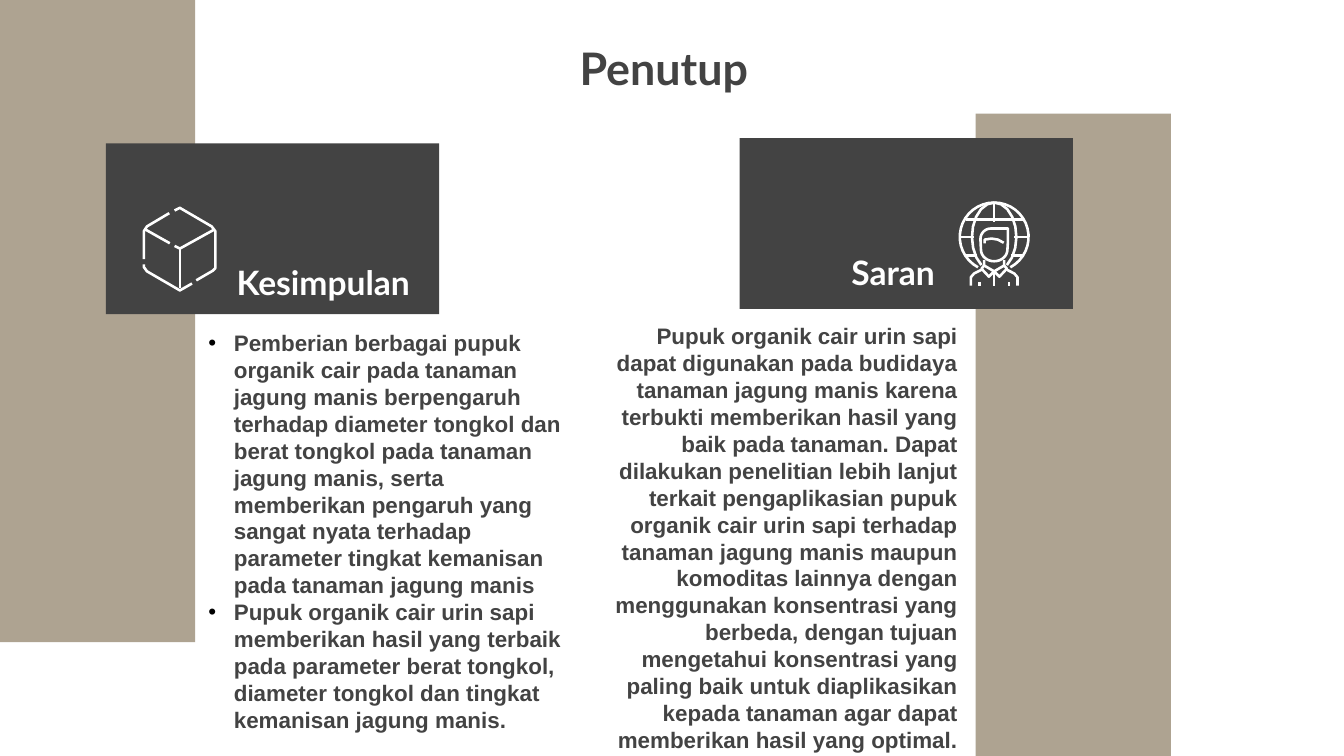
"""Build the closing slide with conclusions on the left and suggestions on the right."""
import math
import lxml.etree
import pptx
import pptx.dml.color
import pptx.enum.shapes
import pptx.enum.text
import pptx.oxml.ns
import pptx.util

Cm, Pt = pptx.util.Cm, pptx.util.Pt
ALIGN, ANCHOR = pptx.enum.text.PP_ALIGN, pptx.enum.text.MSO_ANCHOR
DARK, TAN, WHITE = "434343", "908269", "FFFFFF"
CENTER_X, CENTER_Y, RADIUS = 18.79, 4.48, 0.65

PANELS = [
    ((18.44, 2.15, 3.69, 12.14), TAN, 73),
    ((13.98, 2.61, 6.3, 3.23), DARK, 100),
    ((0, 0, 3.69, 12.14), TAN, 73),
    ((2, 2.71, 6.3, 3.23), DARK, 100),
]
CONCLUSIONS = [
    "Pemberian berbagai pupuk organik cair pada tanaman jagung manis berpengaruh terhadap "
    "diameter tongkol dan berat tongkol pada tanaman jagung manis, serta memberikan pengaruh "
    "yang sangat nyata terhadap parameter tingkat kemanisan pada tanaman jagung manis",
    "Pupuk organik cair urin sapi memberikan hasil yang terbaik pada parameter berat tongkol, "
    "diameter tongkol dan tingkat kemanisan jagung manis.",
]
SUGGESTIONS = [
    "Pupuk organik cair urin sapi dapat digunakan pada budidaya tanaman jagung manis karena "
    "terbukti memberikan hasil yang baik pada tanaman. Dapat dilakukan penelitian lebih lanjut "
    "terkait pengaplikasian pupuk organik cair urin sapi terhadap tanaman jagung manis maupun "
    "komoditas lainnya dengan menggunakan konsentrasi yang berbeda, dengan tujuan mengetahui "
    "konsentrasi yang paling baik untuk diaplikasikan kepada tanaman agar dapat memberikan "
    "hasil yang optimal.",
]
TITLE = {"name": "Lato", "size": Pt(24), "bold": True}
HEADING = {"name": "Lato", "size": Pt(18), "bold": True}
BODY = {"name": "Arial", "size": Pt(12), "bold": True}
TEXTS = [
    (0, (9.14, 0.6, 6.81, 1.35), ["Penutup"], TITLE, DARK, ALIGN.CENTER, ANCHOR.MIDDLE, False),
    (2, (3.69, 5.97, 7.47, 3.1), CONCLUSIONS, BODY, DARK, ALIGN.LEFT, ANCHOR.TOP, True),
    (4, (11.25, 5.84, 7.1, 7.92), SUGGESTIONS, BODY, DARK, ALIGN.RIGHT, ANCHOR.TOP, False),
    (3, (13.98, 4.71, 3.94, 1.07), ["Saran"], HEADING, WHITE, ALIGN.RIGHT, ANCHOR.BOTTOM, False),
    (1, (4.22, 4.9, 7.26, 1.07), ["Kesimpulan"], HEADING, WHITE, ALIGN.LEFT, ANCHOR.BOTTOM, False),
]


def arc(cx, cy, rx, ry, start, end, steps=16):
    angles = [math.radians(start + (end - start) * i / steps) for i in range(steps + 1)]
    return [(cx + rx * math.cos(a), cy + ry * math.sin(a)) for a in angles]


def both_sides(lines):
    return lines + [[(2 * CENTER_X - x, y) for x, y in line] for line in lines]


CUBE = [
    [
        [(3.3, 3.98), (3.4, 3.93), (4, 4.28), (4.07, 4.37), (4.07, 5.07), (4.02, 5.12), (3.71, 5.3)],
        [(3.63, 5.36), (3.4, 5.49), (2.78, 5.13), (2.72, 5.05), (2.72, 5)],
        [(3.3, 4.65), (3.4, 4.7), (4.05, 4.34)],
        [(3.4, 4.7), (3.4, 5.45)],
    ],
    [
        [(2.72, 4.9), (2.72, 4.37), (2.78, 4.28), (3.2, 4.03)],
        [(2.75, 4.34), (3.21, 4.6)],
    ],
]
GLOBE = both_sides([
    arc(CENTER_X, CENTER_Y, 0.42, RADIUS, 125, 270, 8),
    [(18.16, 4.48), (18.41, 4.48)],
    [(18.23, 4.83), (18.47, 4.83)],
]) + [
    arc(CENTER_X, CENTER_Y, RADIUS, RADIUS, 118, 422, 32),
    [(18.25, 4.15), (19.33, 4.15)],
    [(CENTER_X, 3.83), (CENTER_X, 4.2)],
]
PERSON = both_sides([
    [(18.6, 4.92), (18.6, 5.02), (18.55, 5.08), (18.69, 5.23), (CENTER_X, 5.13), (18.6, 5.02)],
    [(18.35, 5.4), (18.35, 5.24), (18.41, 5.17), (18.55, 5.1)],
    [(18.51, 5.33), (18.51, 5.4)],
]) + [
    [(CENTER_X, 5.13), (CENTER_X, 5.4)],
    [(19.05, 4.32)] + arc(18.73, 4.52, 0.2, 0.2, 270, 180, 6)
    + arc(CENTER_X, 4.72, 0.25, 0.22, 180, 0) + [(19.05, 4.56), (19.05, 4.32)],
]
FRINGE = [[(18.61, 4.6), (18.61, 4.53), (18.74, 4.51), (18.86, 4.53), (18.97, 4.59)]]


def rgb(value):
    return pptx.dml.color.RGBColor.from_string(value)


def add_xml(parent, tag, **attrs):
    return lxml.etree.SubElement(parent, pptx.oxml.ns.qn(tag), **attrs)


def add_panel(s, box, color, alpha):
    sp = s.shapes.add_shape(pptx.enum.shapes.MSO_SHAPE.RECTANGLE, *map(Cm, box))
    sp.shadow.inherit = False
    sp.fill.solid()
    sp.fill.fore_color.rgb = rgb(color)
    sp.line.fill.background()
    if alpha < 100:
        clr = sp.element.spPr.find(".//" + pptx.oxml.ns.qn("a:srgbClr"))
        add_xml(clr, "a:alpha", val=str(alpha * 1000))


def add_icon(s, parts):
    shapes = s.shapes.add_group_shape().shapes
    for lines in parts:
        contours = [[(Cm(x), Cm(y)) for x, y in line] for line in lines]
        builder = shapes.build_freeform(*contours[0][0])
        for i, pts in enumerate(contours):
            if i:
                builder.move_to(*pts[0])
            builder.add_line_segments(pts[1:], close=False)
        sp = builder.convert_to_shape()
        sp.shadow.inherit = False
        sp.fill.background()
        sp.line.color.rgb = rgb(WHITE)
        sp.line.width = Pt(1.4)


def fill_text(s, idx, box, paragraphs, font, color, align, anchor, bulleted):
    sp = s.placeholders[idx]
    s.shapes.element.append(sp.element)
    sp.left, sp.top, sp.width, sp.height = map(Cm, box)
    tf = sp.text_frame
    frame = {"word_wrap": True, "auto_size": pptx.enum.text.MSO_AUTO_SIZE.NONE,
             "vertical_anchor": anchor}
    frame.update({"margin_" + side: Cm(0.25) for side in ("left", "top", "right", "bottom")})
    for key, value in frame.items():
        setattr(tf, key, value)
    for i, text in enumerate(paragraphs):
        p = tf.add_paragraph() if i else tf.paragraphs[0]
        p.alignment, p.space_before = align, Pt(0)
        p.line_spacing = Pt(14.42) if font is BODY else 1.0
        r = p.add_run()
        r.text = text
        for key, value in font.items():
            setattr(r.font, key, value)
        r.font.color.rgb = rgb(color)
        pPr = p._p.get_or_add_pPr()
        indent = Cm(0.48) if bulleted else 0
        pPr.set("marL", str(indent))
        pPr.set("indent", str(-indent))
        if bulleted:
            add_xml(add_xml(pPr, "a:buClr"), "a:srgbClr", val="000000")
            add_xml(pPr, "a:buFont", typeface="Arial")
            add_xml(pPr, "a:buChar", char="•")
        else:
            add_xml(pPr, "a:buNone")


def main():
    prs = pptx.Presentation()
    prs.slide_width, prs.slide_height = Cm(25.4), Cm(14.29)
    s = prs.slides.add_slide(prs.slide_layouts[4])
    for panel in PANELS:
        add_panel(s, *panel)
    for icon in (CUBE, [FRINGE, PERSON, GLOBE]):
        add_icon(s, icon)
    for text in TEXTS:
        fill_text(s, *text)
    prs.save("out.pptx")


if __name__ == "__main__":
    main()
